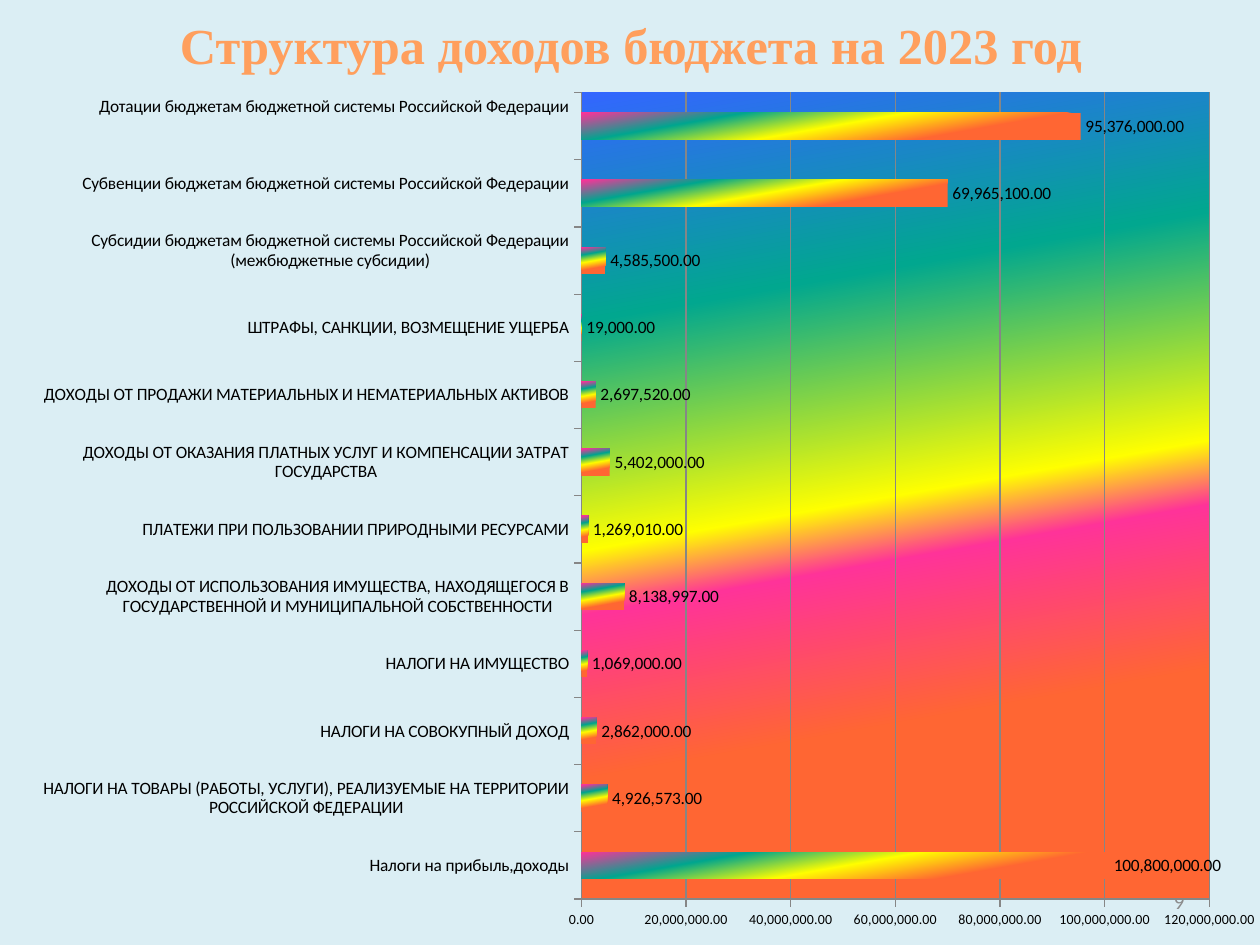
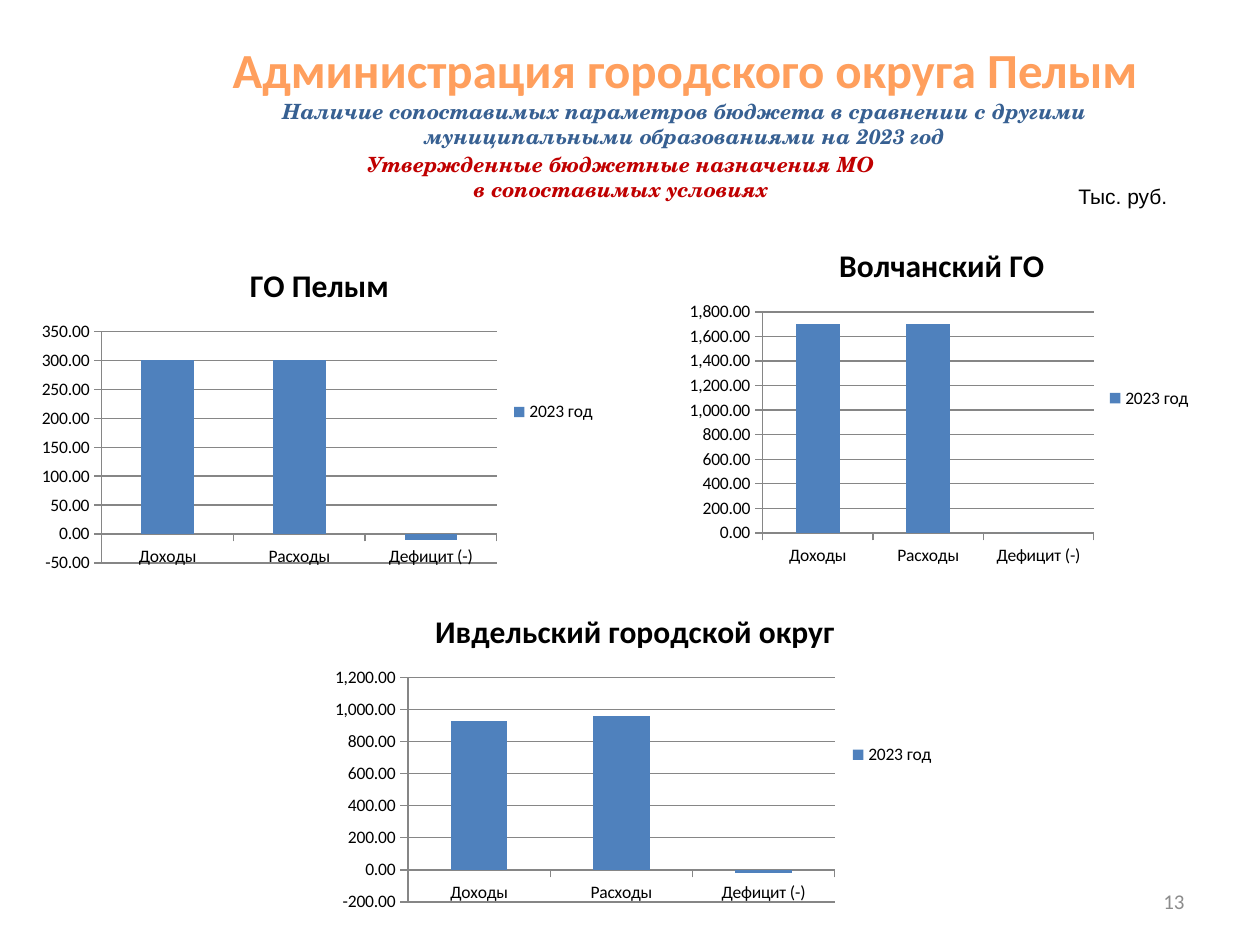
from lxml.etree import SubElement
from pptx import Presentation
from pptx.chart.data import CategoryChartData
from pptx.dml.color import RGBColor
from pptx.dml.fill import FillFormat
from pptx.enum.chart import XL_CHART_TYPE, XL_LABEL_POSITION, XL_LEGEND_POSITION
from pptx.enum.text import MSO_ANCHOR, PP_ALIGN
from pptx.oxml.ns import qn
from pptx.util import Pt

SKY = RGBColor(0xDB, 0xEE, 0xF4)
WHITE = RGBColor(0xFF, 0xFF, 0xFF)
BLACK = RGBColor(0, 0, 0)
PEACH = RGBColor(0xFF, 0x9F, 0x5D)
NAVY = RGBColor(0x37, 0x60, 0x92)
RED = RGBColor(0xC0, 0, 0)
BLUE = RGBColor(0x4F, 0x81, 0xBD)
GREY = RGBColor(0x8C, 0x8C, 0x8C)
RULE = RGBColor(0x86, 0x86, 0x86)

PLOT_STOPS = [(25, "FF6633"), (43, "FF3399"), (50, "FFFF00"),
              (75, "01A78F"), (100, "3366FF")]
BAR_STOPS = [(25, "FF6633"), (50, "FFFF00"), (75, "01A78F"),
             (100, "FF3399"), (100, "3366FF")]

INCOME = [
    ("Налоги на прибыль,доходы", 100800000),
    ("НАЛОГИ НА ТОВАРЫ (РАБОТЫ, УСЛУГИ), РЕАЛИЗУЕМЫЕ НА ТЕРРИТОРИИ РОССИЙСКОЙ ФЕДЕРАЦИИ", 4926573),
    ("НАЛОГИ НА СОВОКУПНЫЙ ДОХОД", 2862000),
    ("НАЛОГИ НА ИМУЩЕСТВО", 1069000),
    ("ДОХОДЫ ОТ ИСПОЛЬЗОВАНИЯ ИМУЩЕСТВА, НАХОДЯЩЕГОСЯ В ГОСУДАРСТВЕННОЙ И МУНИЦИПАЛЬНОЙ СОБСТВЕННОСТИ", 8138997),
    ("ПЛАТЕЖИ ПРИ ПОЛЬЗОВАНИИ ПРИРОДНЫМИ РЕСУРСАМИ", 1269010),
    ("ДОХОДЫ ОТ ОКАЗАНИЯ ПЛАТНЫХ УСЛУГ И КОМПЕНСАЦИИ ЗАТРАТ ГОСУДАРСТВА", 5402000),
    ("ДОХОДЫ ОТ ПРОДАЖИ МАТЕРИАЛЬНЫХ И НЕМАТЕРИАЛЬНЫХ АКТИВОВ", 2697520),
    ("ШТРАФЫ, САНКЦИИ, ВОЗМЕЩЕНИЕ УЩЕРБА", 19000),
    ("Субсидии бюджетам бюджетной системы Российской Федерации (межбюджетные субсидии)\n", 4585500),
    ("Субвенции бюджетам бюджетной системы Российской Федерации\n", 69965100),
    ("Дотации бюджетам бюджетной системы Российской Федерации\n\n", 95376000),
]
PARTS = ["Доходы", "Расходы", "Дефицит (-)"]
TOWNS = [
    ("Волчанский ГО", (388.1, 128.2, 300.2, 198.7), [1700, 1700, 0]),
    ("ГО Пелым", (17.3, 139.7, 330.5, 191.5), [300, 300, -10]),
    ("Ивдельский городской округ", (184.3, 337.7, 357.1, 187.2), [930, 960, -20]),
]


def blend(fill, root, stops, angle):
    fill.gradient()
    fill.gradient_angle = 360 - angle
    group = next(root.iter(qn("a:gsLst")))
    for old in list(group):
        group.remove(old)
    for place, color in stops:
        stop = SubElement(group, qn("a:gs"), pos=str(place * 1000))
        SubElement(stop, qn("a:srgbClr"), val=color)


class Deck:
    font = "Calibri"
    serif = "TeX Gyre Schola"
    form = "#,##0.00"

    def __init__(self):
        self.file = Presentation()
        self.file.slide_width, self.file.slide_height = Pt(720), Pt(540)
        self.slide = None

    def page(self, color, number):
        self.slide = self.file.slides.add_slide(self.file.slide_layouts[6])
        fill = self.slide.background.fill
        fill.solid()
        fill.fore_color.rgb = color
        self.text((516.2, 500.4, 167.8, 28.8), [(number, 12, self.font, GREY, False, False)],
                  PP_ALIGN.RIGHT, MSO_ANCHOR.MIDDLE)

    def text(self, box, lines, align=PP_ALIGN.CENTER, anchor=MSO_ANCHOR.TOP):
        frame = self.slide.shapes.add_textbox(*map(Pt, box)).text_frame
        frame.word_wrap = True
        frame.vertical_anchor = anchor
        for index, (words, size, face, color, bold, slant) in enumerate(lines):
            para = frame.add_paragraph() if index else frame.paragraphs[0]
            para.text = words
            para.alignment = align
            font = para.font
            font.size, font.name = Pt(size), face
            font.bold, font.italic = bold, slant
            font.color.rgb = color

    def chart(self, kind, box, names, label, values, title=None):
        data = CategoryChartData(number_format=self.form)
        data.categories = names
        data.add_series(label, values)
        chart = self.slide.shapes.add_chart(kind, *map(Pt, box), data).chart
        chart.font.size, chart.font.name = Pt(10), self.font
        chart.font.color.rgb = BLACK
        chart.has_title = title is not None
        chart.has_legend = title is not None
        if title:
            frame = chart.chart_title.text_frame
            frame.text = title
            font = frame.paragraphs[0].font
            font.size, font.name, font.bold = Pt(18), self.font, True
            font.color.rgb = BLACK
            chart.legend.position = XL_LEGEND_POSITION.RIGHT
            chart.legend.include_in_layout = False
        axis = chart.value_axis
        axis.has_major_gridlines = True
        axis.tick_labels.number_format = self.form
        axis.tick_labels.number_format_is_linked = False
        for part in (axis, chart.category_axis, axis.major_gridlines):
            part.format.line.color.rgb = RULE
            part.format.line.width = Pt(0.75)
        plot = chart.plots[0]
        plot.gap_width = 150
        plot.vary_by_categories = False
        fill = plot.series[0].format.fill
        fill.solid()
        fill.fore_color.rgb = BLUE
        return chart

    def rainbow(self, chart, frame):
        plot = chart.plots[0]
        row = plot.series[0]
        blend(row.format.fill, row._element, BAR_STOPS, 260)
        area = next(chart._chartSpace.iter(qn("c:plotArea")))
        for old in area.findall(qn("c:layout")):
            area.remove(old)
        place = SubElement(area, qn("c:layout"))
        area.insert(0, place)
        manual = SubElement(place, qn("c:manualLayout"))
        tags = ["layoutTarget", "xMode", "yMode", "x", "y", "w", "h"]
        for tag, value in zip(tags, ["inner", "edge", "edge", *frame]):
            SubElement(manual, qn("c:" + tag), val=str(value))
        style = SubElement(area, qn("c:spPr"))
        blend(FillFormat.from_fill_parent(style), style, PLOT_STOPS, 260)
        plot.has_data_labels = True
        labels = plot.data_labels
        labels.show_value = True
        labels.number_format = self.form
        labels.number_format_is_linked = False
        labels.position = XL_LABEL_POSITION.OUTSIDE_END
        chart.value_axis.tick_labels.font.size = Pt(8)


def main():
    deck = Deck()

    deck.page(SKY, "9")
    deck.text((36.7, 3.6, 648, 43.9),
              [("Структура доходов бюджета на 2023 год", 28.8, "Times New Roman", PEACH, True, False)],
              anchor=MSO_ANCHOR.MIDDLE)
    names, sums = zip(*INCOME)
    chart = deck.chart(XL_CHART_TYPE.BAR_CLUSTERED, (8.6, 43.2, 708.5, 487.4),
                       names, "Series 1", sums)
    deck.rainbow(chart, (0.46, 0.02, 0.51, 0.95))

    deck.page(WHITE, "13")
    deck.text((99.4, 19, 583.9, 70), [
        ("Администрация городского округа Пелым", 28, deck.font, PEACH, True, False),
        ("Наличие сопоставимых параметров бюджета в сравнении с другими "
         "муниципальными образованиями на 2023 год", 12, deck.serif, NAVY, True, True),
    ])
    deck.text((19.4, 82.8, 671, 40), [
        (words, 12, deck.serif, RED, True, True)
        for words in ("Утвержденные бюджетные назначения МО", "в сопоставимых условиях")
    ])
    deck.text((609.1, 101.5, 79.2, 21.6),
              [("Тыс. руб.", 12, "Arial", BLACK, False, False)], PP_ALIGN.LEFT)
    for title, box, values in TOWNS:
        deck.chart(XL_CHART_TYPE.COLUMN_CLUSTERED, box, PARTS, "2023 год", values, title)

    deck.file.save("out.pptx")


if __name__ == "__main__":
    main()
